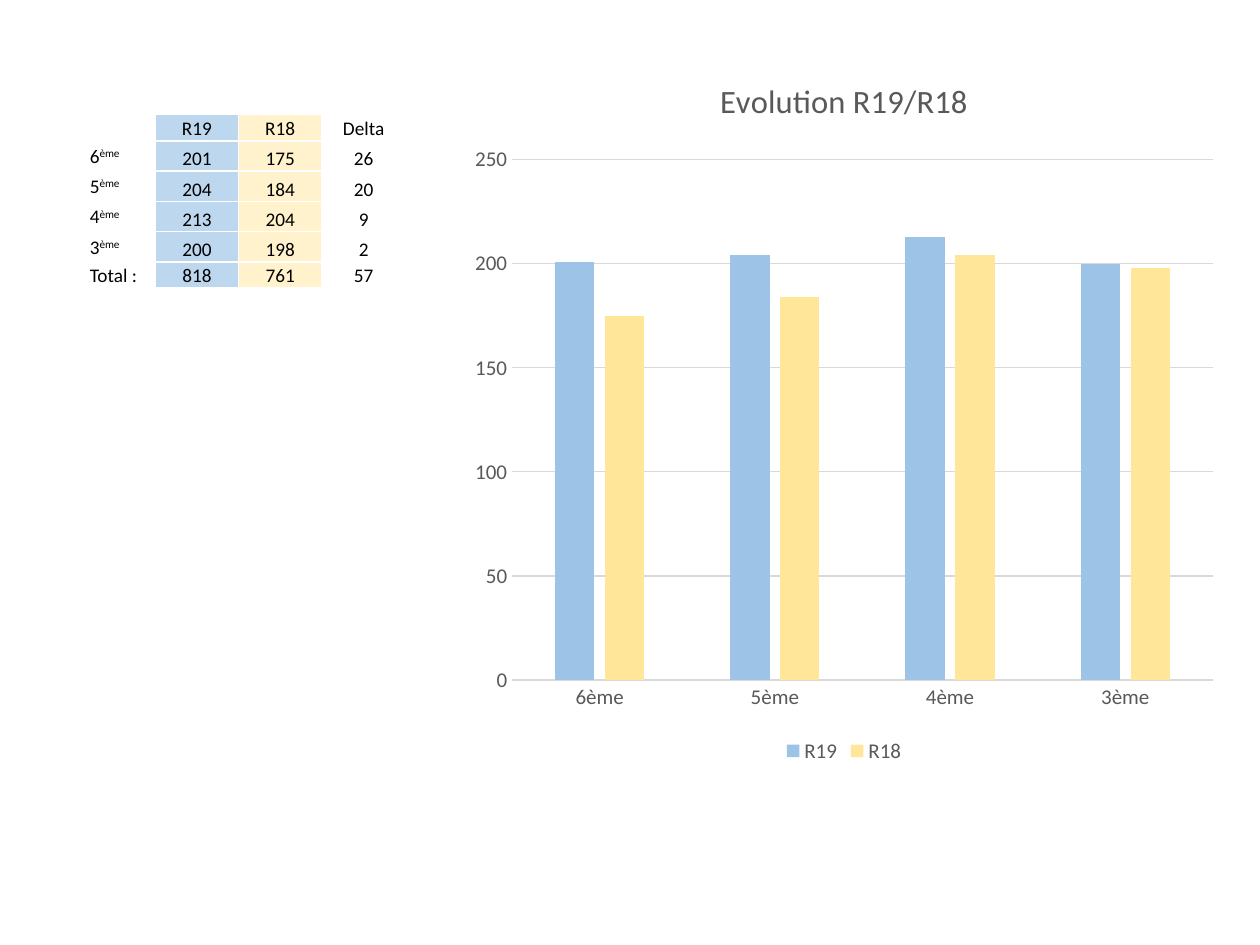
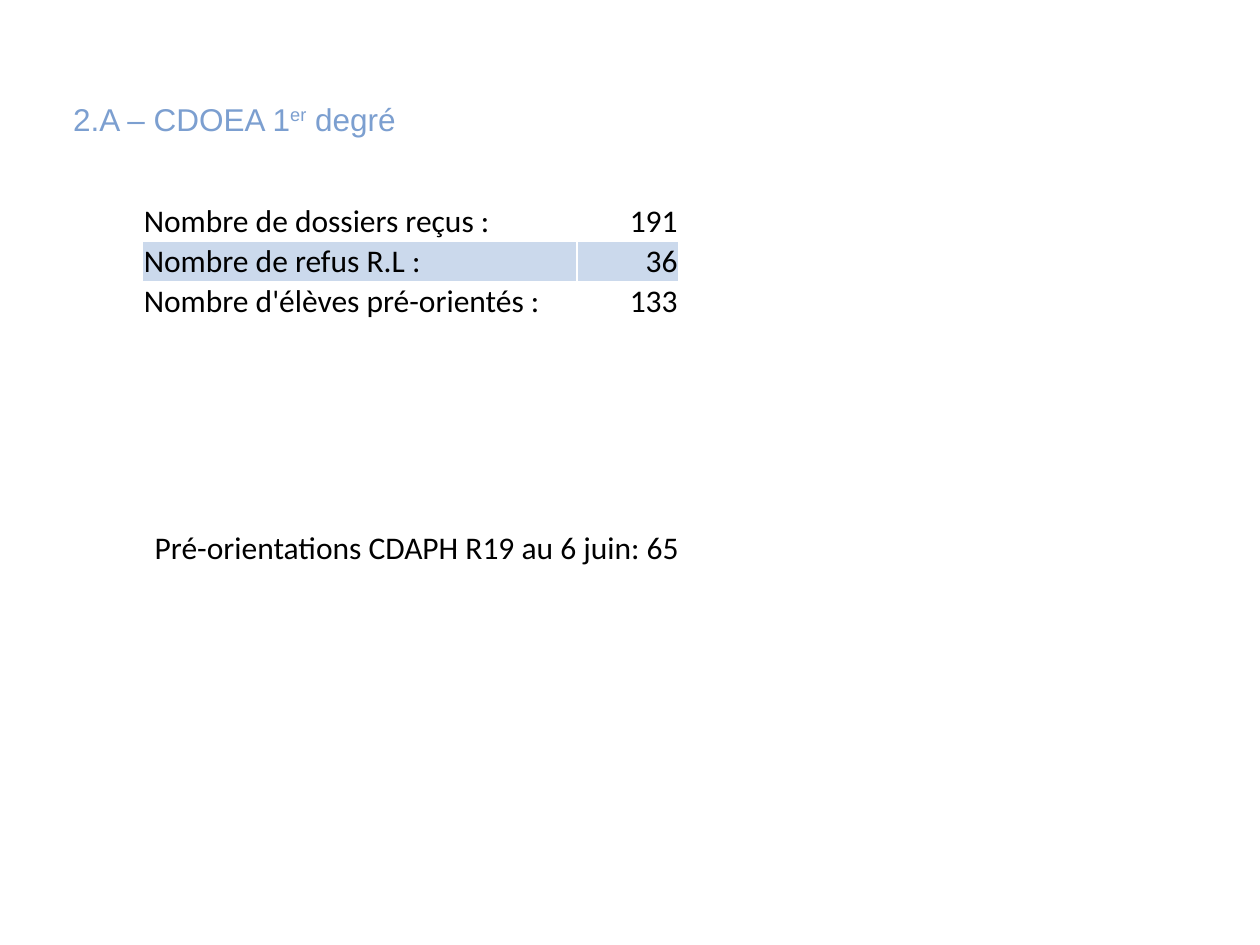
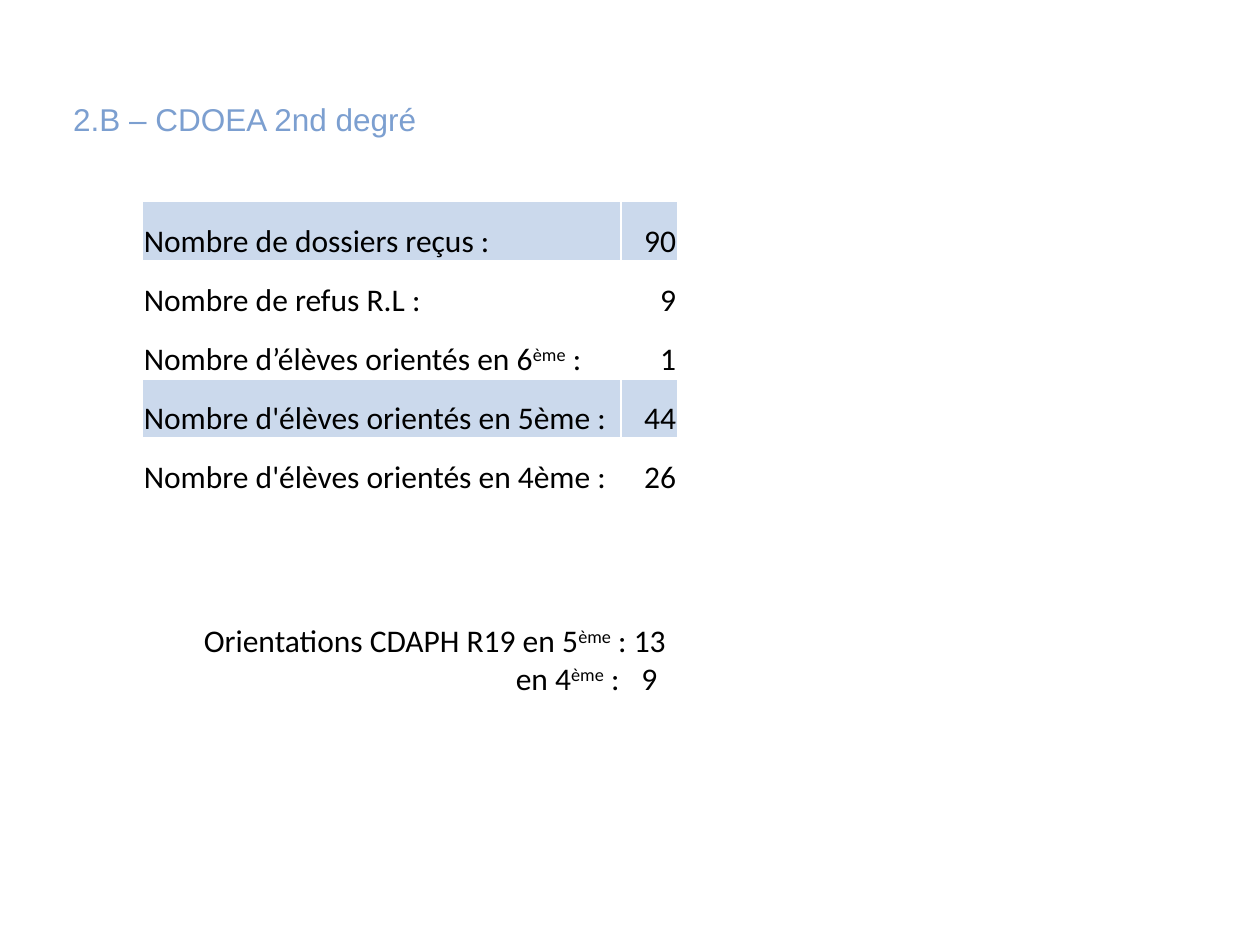
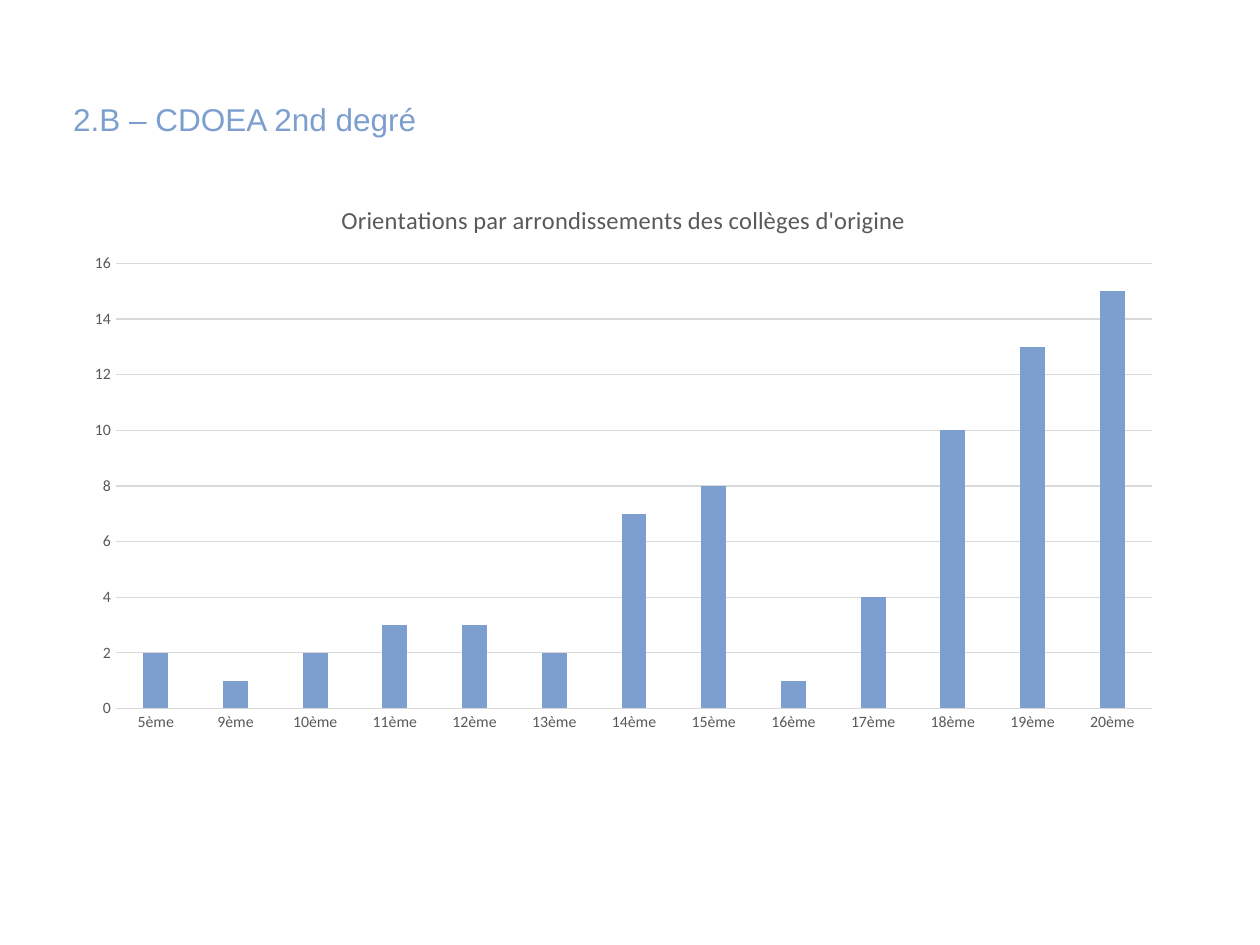
"""Builds four slides on pupil numbers and CDOEA orientations."""
from dataclasses import dataclass

from lxml.etree import SubElement
from pptx import Presentation
from pptx.chart.data import CategoryChartData
from pptx.dml.color import RGBColor as RGB
from pptx.enum.chart import XL_CHART_TYPE as ChartType
from pptx.enum.chart import XL_LEGEND_POSITION as LegendPosition
from pptx.enum.chart import XL_TICK_MARK as TickMark
from pptx.enum.text import MSO_ANCHOR as Anchor
from pptx.enum.text import MSO_AUTO_SIZE as AutoSize
from pptx.enum.text import PP_ALIGN as Align
from pptx.oxml.ns import qn
from pptx.util import Cm, Pt


@dataclass(frozen=True)
class Theme:
    body_font: str = "Calibri"
    title_font: str = "Arial"
    text: str = "000000"
    white: str = "FFFFFF"
    accent: str = "7C9FD0"
    accent_pale: str = "CBD9EC"
    blue: str = "9DC3E6"
    blue_pale: str = "BDD7EE"
    yellow: str = "FFE699"
    yellow_pale: str = "FFF2CC"
    chart_text: str = "595959"
    chart_line: str = "D9D9D9"
    body_size: float = 18
    small_size: float = 11


THEME = Theme()
TITLE_BOX = (1.22, 1.22, 22.94, 2.44)
TABLE_LEFT, TABLE_TOP = 2.87, 4.06

LEVELS = ["6ème", "5ème", "4ème", "3ème"]
LEVEL_ROWS = [
    ["", "R19", "R18", "Delta"],
    ["6^ème", "201", "175", "26"],
    ["5^ème", "204", "184", "20"],
    ["4^ème", "213", "204", "9"],
    ["3^ème", "200", "198", "2"],
    ["Total :", "818", "761", "57"],
]
LEVEL_FILLS = [THEME.white, THEME.blue_pale, THEME.yellow_pale, THEME.white]
LEVEL_SERIES = [
    ("R19", [201, 204, 213, 200], THEME.blue),
    ("R18", [175, 184, 204, 198], THEME.yellow),
]

FIRST_DEGREE = {
    "title": "2.A – CDOEA 1^er^ degré",
    "rows": [
        ["Nombre de dossiers reçus :", "191"],
        ["Nombre de refus R.L :", "36"],
        ["Nombre d'élèves pré-orientés :", "133"],
    ],
    "shaded": {1},
    "widths": [8.76, 2.06],
    "row_height": 0.79,
    "line_spacing": 1.0,
    "note": ["Pré-orientations CDAPH R19 au 6 juin: 65"],
    "note_box": (2.87, 10.52, 11.35, 1.02),
}
SECOND_DEGREE = {
    "title": "2.B – CDOEA 2nd degré",
    "rows": [
        ["Nombre de dossiers reçus :", "90"],
        ["Nombre de refus R.L :", "9"],
        ["Nombre d’élèves orientés en 6^ème^ :", "1"],
        ["Nombre d'élèves orientés en 5ème :", "44"],
        ["Nombre d'élèves orientés en 4ème :", "26"],
    ],
    "shaded": {0, 3},
    "widths": [9.65, 1.14],
    "row_height": 1.17,
    "line_spacing": 1.5,
    "note": ["Orientations CDAPH R19 en 5^ème^ : 13", "\ten 4^ème^ :\t9"],
    "note_box": (3.86, 12.4, 10.59, 1.8),
}
NOTE_TABS = [6.29, 8.82]

DISTRICTS = [f"{number}ème" for number in (5, *range(9, 21))]
DISTRICT_SERIES = [("Series 1", [2, 1, 2, 3, 3, 2, 7, 8, 1, 4, 10, 13, 15], THEME.accent)]


def set_font(font, size, color, name=THEME.body_font):
    """Apply a plain face, size and colour."""
    font.name, font.size, font.bold = name, Pt(size), False
    font.color.rgb = RGB.from_string(color)


def write(paragraph, text, size, color=THEME.text, name=THEME.body_font):
    """Add runs to a paragraph; the parts between carets are superscript."""
    for index, part in enumerate(text.split("^")):
        if part:
            run = paragraph.add_run()
            run.text = part
            set_font(run.font, size, color, name)
            if index % 2:
                run._r.get_or_add_rPr().set("baseline", "30000")
    if not text:
        SubElement(paragraph._p, qn("a:endParaRPr"), sz=str(size * 100))


def add_titled_slide(presentation, title):
    """Add a title-only slide with the shared title style."""
    slide = presentation.slides.add_slide(presentation.slide_layouts[5])
    shape = slide.shapes.title
    shape.left, shape.top, shape.width, shape.height = map(Cm, TITLE_BOX)
    frame = shape.text_frame
    frame.word_wrap, frame.auto_size = True, AutoSize.NONE
    frame.vertical_anchor = Anchor.MIDDLE
    paragraph = frame.paragraphs[0]
    paragraph.alignment, paragraph.line_spacing = Align.LEFT, 0.9
    write(paragraph, title, THEME.body_size, THEME.accent, THEME.title_font)
    return slide


def style_cell(cell, fill, anchor):
    """Give a cell white borders, a fill, tight margins and an anchor."""
    properties = cell._tc.get_or_add_tcPr()
    for side in ("lnL", "lnR", "lnT", "lnB"):
        line = SubElement(properties, qn(f"a:{side}"), w=str(Pt(1)))
        SubElement(SubElement(line, qn("a:solidFill")), qn("a:srgbClr"), val=THEME.white)
    cell.fill.solid()
    cell.fill.fore_color.rgb = RGB.from_string(fill)
    cell.margin_left = cell.margin_right = cell.margin_top = Cm(0.03)
    cell.margin_bottom = 0
    cell.vertical_anchor = anchor


def add_grid(slide, origin, rows, widths, heights, size, fill_at, value_align,
             value_anchor=Anchor.MIDDLE, line_spacing=None):
    """Add a table whose first column holds labels and the others values."""
    table = slide.shapes.add_table(
        len(rows), len(widths), *map(Cm, origin), Cm(sum(widths)), Cm(sum(heights))).table
    table.first_row = table.horz_banding = False
    for column, width in zip(table.columns, widths):
        column.width = Cm(width)
    for row_index, (row, height) in enumerate(zip(rows, heights)):
        table.rows[row_index].height = Cm(height)
        for column_index, text in enumerate(row):
            cell = table.cell(row_index, column_index)
            is_value = row_index > 0 and column_index > 0
            style_cell(cell, fill_at(row_index, column_index),
                       value_anchor if is_value else Anchor.MIDDLE)
            paragraph = cell.text_frame.paragraphs[0]
            paragraph.alignment = value_align if column_index else Align.LEFT
            paragraph.line_spacing = line_spacing
            write(paragraph, text, size)


def add_note(slide, box, lines):
    """Add a text box, with tab stops on the lines that use tabs."""
    frame = slide.shapes.add_textbox(*map(Cm, box)).text_frame
    frame.word_wrap, frame.auto_size = True, AutoSize.SHAPE_TO_FIT_TEXT
    for index, line in enumerate(lines):
        paragraph = frame.add_paragraph() if index else frame.paragraphs[0]
        if "\t" in line:
            tabs = SubElement(paragraph._p.get_or_add_pPr(), qn("a:tabLst"))
            for position in NOTE_TABS:
                SubElement(tabs, qn("a:tab"), pos=str(Cm(position)), algn="l")
        write(paragraph, line, THEME.body_size)


def add_columns(slide, box, title, categories, series, title_size, label_size, legend=False):
    """Add a clustered column chart in the shared chart style."""
    data = CategoryChartData()
    data.categories = categories
    for name, values, _ in series:
        data.add_series(name, values)
    chart = slide.shapes.add_chart(ChartType.COLUMN_CLUSTERED, *map(Cm, box), data).chart
    set_font(chart.font, 10, THEME.text)
    chart.has_title = True
    write(chart.chart_title.text_frame.paragraphs[0], title, title_size, THEME.chart_text)
    chart.chart_title.include_in_layout = False

    grid_line = chart.value_axis.major_gridlines.format.line
    for line in (grid_line, chart.category_axis.format.line):
        line.color.rgb, line.width = RGB.from_string(THEME.chart_line), Pt(0.75)
    chart.value_axis.format.line.fill.background()
    for axis in (chart.category_axis, chart.value_axis):
        axis.major_tick_mark = axis.minor_tick_mark = TickMark.NONE
        set_font(axis.tick_labels.font, label_size, THEME.chart_text)

    plot = chart.plots[0]
    plot.gap_width, plot.overlap, plot.vary_by_categories = 219, -27, False
    for bars, (_, _, color) in zip(plot.series, series):
        bars.format.fill.solid()
        bars.format.fill.fore_color.rgb = RGB.from_string(color)
    chart.has_legend = legend
    if legend:
        chart.legend.position = LegendPosition.BOTTOM
        chart.legend.include_in_layout = False
        set_font(chart.legend.font, label_size, THEME.chart_text)


def add_levels_slide(presentation):
    """Add the comparison of both years by school level."""
    slide = presentation.slides.add_slide(presentation.slide_layouts[6])
    add_grid(slide, (1.78, 2.31), LEVEL_ROWS, [1.35] + [1.68] * 3,
             [0.53] + [0.61] * 4 + [0.53], THEME.small_size,
             lambda row, column: LEVEL_FILLS[column], Align.CENTER, Anchor.BOTTOM)
    add_columns(slide, (9.27, 1.04, 15.49, 14.45), "Evolution R19/R18", LEVELS,
                LEVEL_SERIES, 18.6, 12, legend=True)


def add_degree_slide(presentation, degree):
    """Add a titled slide with a table of counts and a note."""
    slide = add_titled_slide(presentation, degree["title"])
    rows = degree["rows"]
    add_grid(slide, (TABLE_LEFT, TABLE_TOP), rows, degree["widths"],
             [degree["row_height"]] * len(rows), THEME.body_size,
             lambda row, column: THEME.accent_pale if row in degree["shaded"] else THEME.white,
             Align.RIGHT, line_spacing=degree["line_spacing"])
    add_note(slide, degree["note_box"], degree["note"])


def main():
    """Build and save the presentation."""
    presentation = Presentation()
    presentation.slide_width, presentation.slide_height = Cm(25.4), Cm(19.05)
    add_levels_slide(presentation)
    for degree in (FIRST_DEGREE, SECOND_DEGREE):
        add_degree_slide(presentation, degree)
    slide = add_titled_slide(presentation, SECOND_DEGREE["title"])
    add_columns(slide, (1.47, 3.63, 22.2, 11.35),
                "Orientations par arrondissements des collèges d'origine",
                DISTRICTS, DISTRICT_SERIES, 14, 9)
    presentation.save("out.pptx")


if __name__ == "__main__":
    main()
